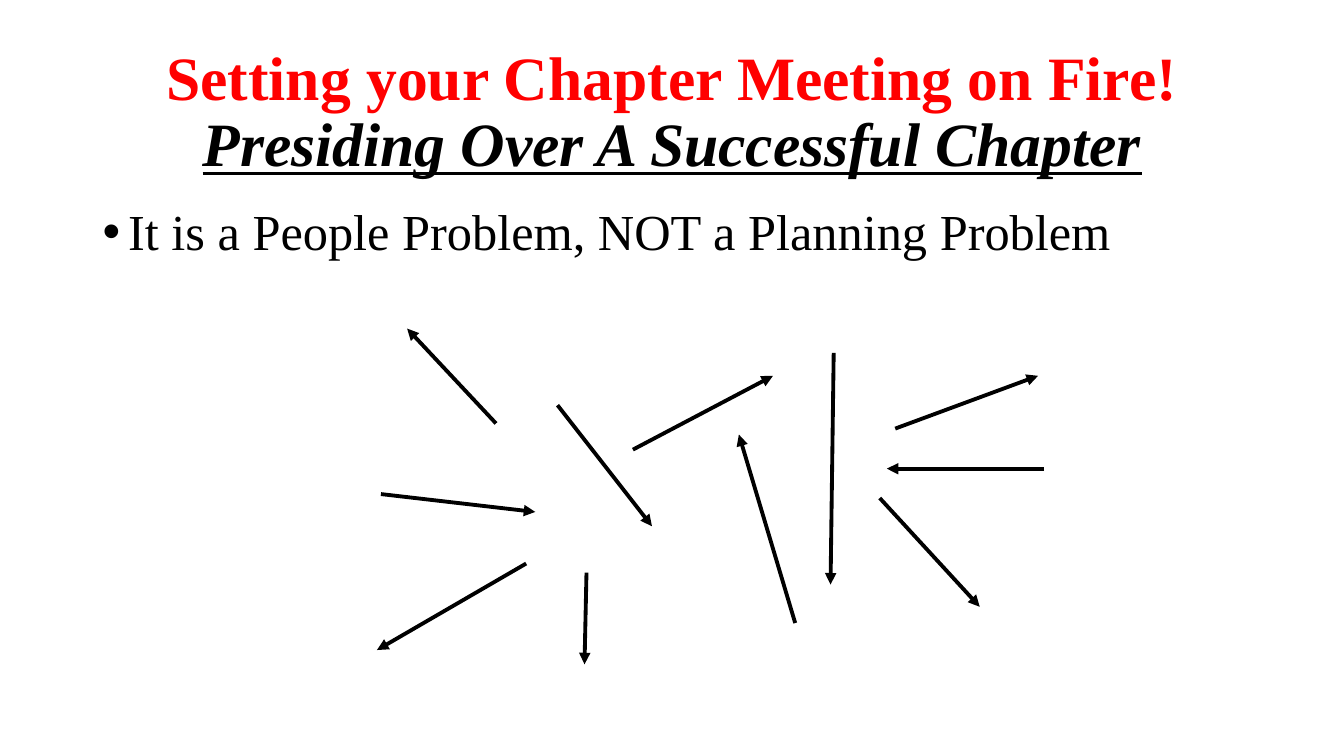
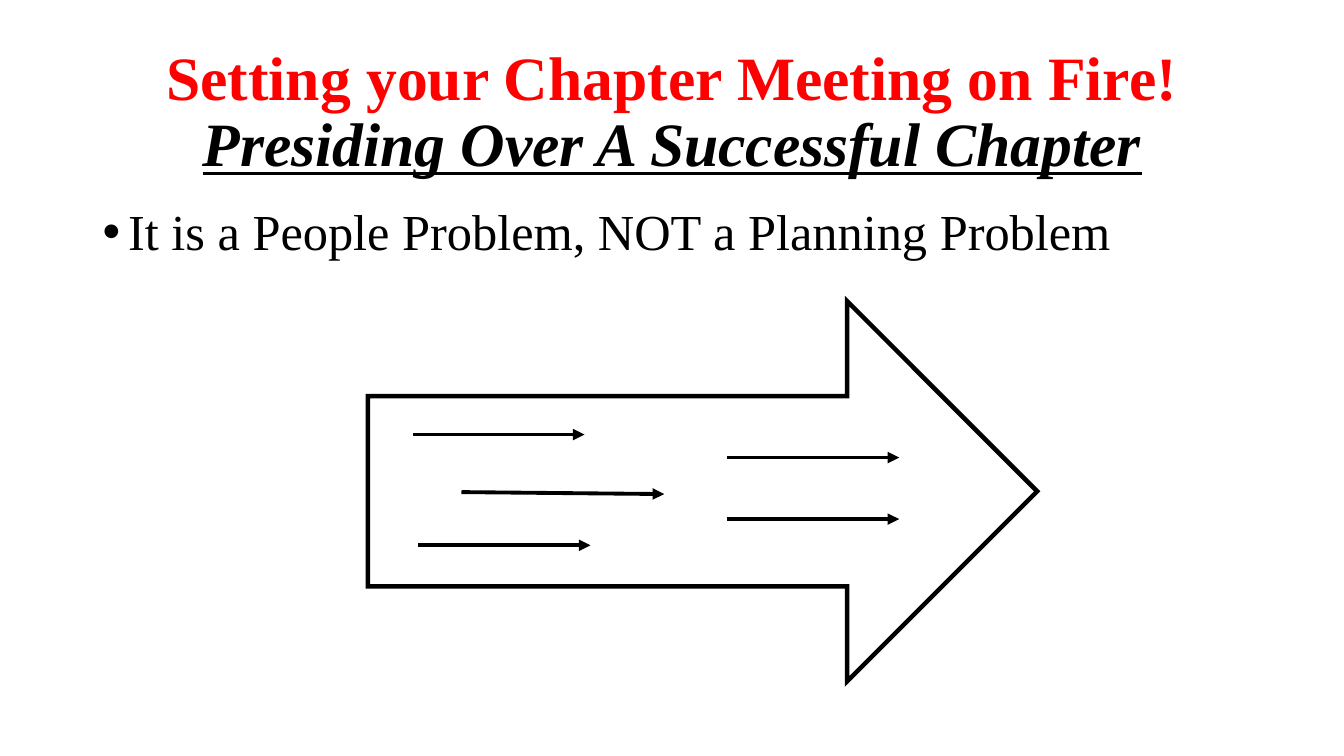
from lxml import etree
from pptx import Presentation
from pptx.dml.color import RGBColor
from pptx.enum import shapes, text
from pptx.oxml.ns import qn
from pptx.util import Cm, Pt

RED = RGBColor(0xFF, 0x00, 0x00)
BLACK = RGBColor(0x00, 0x00, 0x00)
FONT = "Times New Roman"

TITLE = "Setting your Chapter Meeting on Fire!"
SUBTITLE = "Presiding Over A Successful Chapter"
POINT = "It is a People Problem, NOT a Planning Problem"

# Lengths in cm: left, top, width, height
TITLE_AREA = (2.34, 1.02, 29.21, 3.68)
POINT_AREA = (2.34, 5.08, 29.21, 12.09)
BIG_ARROW_AREA = (9.27, 7.59, 16.87, 9.58)

# Small arrows in cm: start x, start y, end x, end y
SCATTERED_ARROWS = [
    (22.17, 12.55, 24.69, 15.29),
    (22.56, 10.8, 26.16, 9.47),
    (20.04, 15.7, 18.62, 10.95),
    (21.01, 8.89, 20.93, 14.73),
    (15.95, 11.33, 19.48, 9.47),
    (14.78, 14.43, 14.73, 16.74),
    (14.05, 10.21, 16.43, 13.26),
    (13.26, 14.2, 9.5, 16.38),
    (12.5, 10.67, 10.26, 8.28),
    (9.6, 12.45, 13.49, 12.9),
    (26.31, 11.81, 22.35, 11.81),
]
ALIGNED_ARROWS = [
    (10.41, 10.95, 14.73, 10.95),
    (11.63, 12.4, 16.74, 12.45),
    (10.54, 13.74, 14.88, 13.74),
    (18.31, 11.53, 22.66, 11.53),
    (18.31, 13.08, 22.66, 13.08),
]


def cm(values):
    return [Cm(value) for value in values]


def add_paragraph_box(page, area, anchor):
    """Add a wrapping text box and return its first paragraph."""
    frame = page.shapes.add_textbox(*cm(area)).text_frame
    frame.word_wrap = True
    frame.vertical_anchor = anchor
    para = frame.paragraphs[0]
    para.line_spacing = 0.9
    return para


def add_title(page):
    para = add_paragraph_box(page, TITLE_AREA, text.MSO_ANCHOR.MIDDLE)
    para.alignment = text.PP_ALIGN.CENTER
    para.font.name, para.font.size, para.font.bold = FONT, Pt(44), True
    span = para.add_run()
    span.text = TITLE
    span.font.color.rgb = RED
    para.add_line_break()
    span = para.add_run()
    span.text = SUBTITLE
    span.font.color.rgb = BLACK
    span.font.italic = span.font.underline = True


def add_point(page):
    para = add_paragraph_box(page, POINT_AREA, text.MSO_ANCHOR.TOP)
    para.space_before = Pt(0)
    para.add_run().text = POINT
    # Bullet with a hanging indent
    props = para._p.get_or_add_pPr()
    props.set("marL", str(Cm(0.64)))
    props.set("indent", str(Cm(-0.64)))
    etree.SubElement(props, qn("a:buFont"), typeface="Arial")
    etree.SubElement(props, qn("a:buChar"), char="•")
    para.font.name, para.font.size = FONT, Pt(36)
    para.font.color.rgb = BLACK


def add_arrow(page, ends):
    arrow = page.shapes.add_connector(shapes.MSO_CONNECTOR.STRAIGHT, *cm(ends))
    arrow.line.color.rgb = BLACK
    arrow.line.width = Pt(2.75)
    etree.SubElement(arrow.line._get_or_add_ln(), qn("a:tailEnd"), type="triangle")
    etree.SubElement(arrow._element.spPr, qn("a:effectLst"))


def add_big_arrow(page):
    arrow = page.shapes.add_shape(shapes.MSO_SHAPE.RIGHT_ARROW, *cm(BIG_ARROW_AREA))
    arrow.shadow.inherit = False
    arrow.fill.background()
    arrow.line.color.rgb = BLACK
    arrow.line.width = Pt(3.25)
    etree.SubElement(arrow.line._get_or_add_ln(), qn("a:miter"), lim="800000")


def add_page(deck, arrows):
    """Add a page with the shared heading and its small arrows."""
    page = deck.slides.add_slide(deck.slide_layouts[6])
    add_title(page)
    add_point(page)
    for ends in arrows:
        add_arrow(page, ends)
    return page


def main():
    deck = Presentation()
    deck.slide_width, deck.slide_height = Cm(33.87), Cm(19.05)
    add_page(deck, SCATTERED_ARROWS)
    add_big_arrow(add_page(deck, ALIGNED_ARROWS))
    deck.save("out.pptx")


if __name__ == "__main__":
    main()
